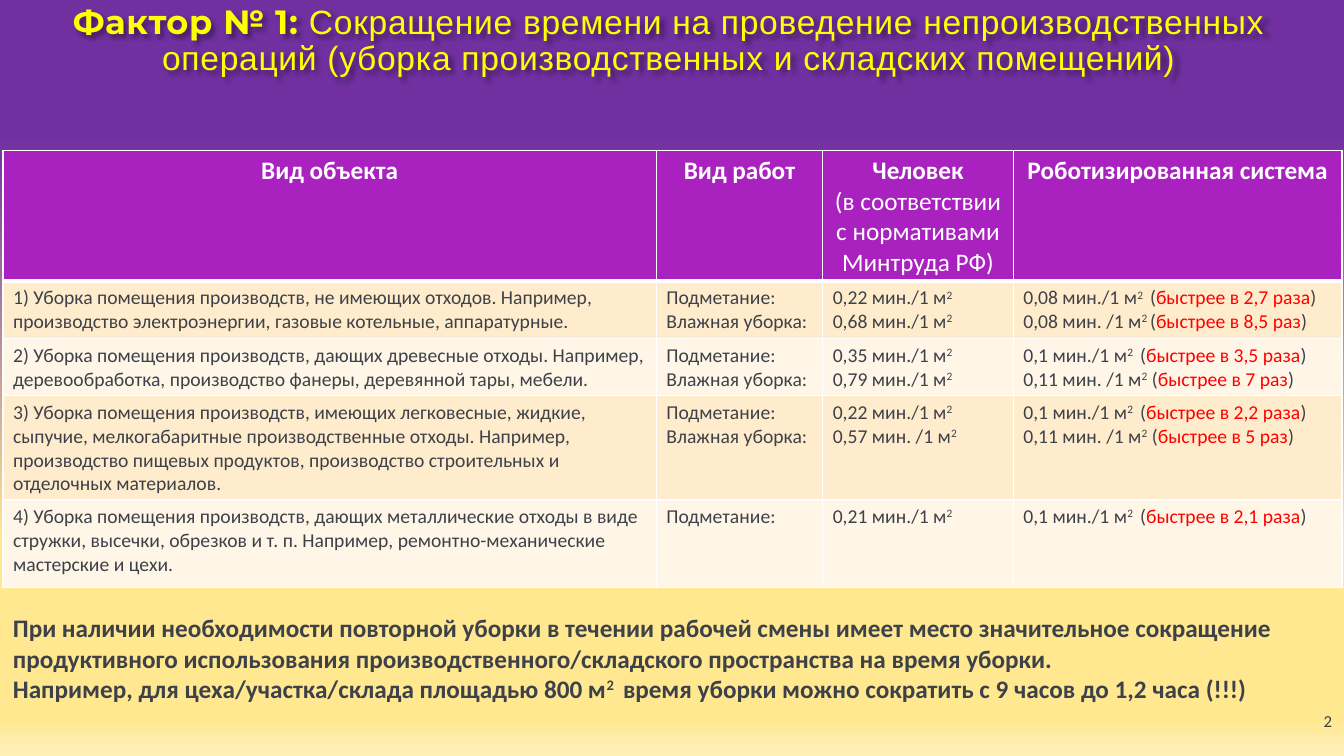
import pptx
import pptx.dml.color
import pptx.enum.text
import pptx.oxml
import pptx.oxml.ns
import pptx.util

COLORS = {
    "purple": "7030A0", "gold": "FFE88F", "cream": "FFEFB4", "header": "A922C0",
    "odd": "FFECCC", "even": "FFF6E7", "text": "3D4149", "title": "FFFF00",
    "white": "FFFFFF", "red": "FF0000",
}
WIDTH, HEIGHT = 13.33, 7.5
COLUMNS = [6.48, 1.65, 1.89, 3.26]
ROWS = [0.97, 0.42, 0.42, 0.77, 0.87]
ALIGN = pptx.enum.text.PP_ALIGN
ANCHOR = pptx.enum.text.MSO_ANCHOR
NS = pptx.oxml.ns.nsdecls("a")

TITLE = [
    "Фактор № 1: ",
    "Сокращение времени на проведение непроизводственных операций "
    "(уборка производственных и складских помещений)",
]
HEADERS = [
    ["Вид объекта"],
    ["Вид работ"],
    ["Человек", "(в соответствии с нормативами Минтруда РФ)"],
    ["Роботизированная система"],
]
SWEEP, MOP = "Подметание:", "Влажная уборка:"
# In marked text "|" parts runs, "^" opens a superscript run and "!" a red one.
BODY = [
    [["1) Уборка помещения производств, не имеющих отходов. Например, "
      "производство электроэнергии, газовые котельные, аппаратурные."],
     [SWEEP, MOP],
     ["0,22 мин./1 м|^2", "0,68 мин./1 м|^2"],
     ["0,08 мин./1 м|^2 | (|!быстрее в 2,7 раза|)",
      "0,08 мин. /1 м|^2 |(|!быстрее в 8,5 раз|)"]],
    [["2) Уборка помещения производств, дающих древесные отходы. Например, "
      "деревообработка, производство фанеры, деревянной тары, мебели."],
     [SWEEP, MOP],
     ["0,35 мин./1 м|^2", "0,79 мин./1 м|^2"],
     ["0,1 мин./1 м|^2 | (|!быстрее в 3,5 раза|)",
      "0,11 мин. /1 м|^2| (|!быстрее в 7 раз|)"]],
    [["3) Уборка помещения производств, имеющих легковесные, жидкие,",
      "сыпучие, мелкогабаритные производственные отходы. Например,",
      "производство пищевых продуктов, производство строительных и "
      "отделочных материалов."],
     [SWEEP, MOP],
     ["0,22 мин./1 м|^2", "0,57 мин. /1 м|^2"],
     ["0,1 мин./1 м|^2 | (|!быстрее в 2,2 раза|)",
      "0,11 мин. /1 м|^2| (|!быстрее в 5 раз|)"]],
    [["4) Уборка помещения производств, дающих металлические отходы в виде "
      "стружки, высечки, обрезков и т. п. Например, ремонтно-механические "
      "мастерские и цехи."],
     [SWEEP],
     ["0,21 мин./1 м|^2"],
     ["0,1 мин./1 м|^2 | (|!быстрее в 2,1 раза|)"]],
]
NOTE = [
    "При наличии необходимости повторной уборки в течении рабочей смены имеет "
    "место значительное сокращение продуктивного использования "
    "производственного/складского пространства на время уборки.",
    "Например, для цеха/участка/склада площадью 800 м|^2 | время уборки можно "
    "сократить с 9 часов до 1,2 часа (!!!)",
]


def rgb(name):
    return pptx.dml.color.RGBColor.from_string(COLORS[name])


def add_run(p, text, size, color, bold=False, font="Calibri"):
    r = p.add_run()
    r.text = text
    r.font.size = pptx.util.Pt(size)
    r.font.name = font
    r.font.bold = bold
    r.font.color.rgb = rgb(color)
    return r


def fill_text(tf, lines, size, color, bold=False, align=ALIGN.LEFT):
    """Write each marked line as one paragraph."""
    for i, line in enumerate(lines):
        p = tf.add_paragraph() if i else tf.paragraphs[0]
        p.alignment = align
        for part in line.split("|"):
            red = part.startswith("!")
            r = add_run(p, part.lstrip("^!"), size, "red" if red else color, bold)
            if part.startswith("^"):
                r._r.get_or_add_rPr().set("baseline", "30000")


def add_box(s, box):
    sp = s.shapes.add_textbox(*map(pptx.util.Inches, box))
    sp.text_frame.word_wrap = True
    return sp


def paint_background(s):
    fill = s.background.fill
    fill.gradient()
    grad = next(s.element.iter(pptx.oxml.ns.qn("a:gradFill")))
    for child in list(grad):
        grad.remove(child)
    stops = [(18, "purple"), (71, "gold"), (95, "gold"), (99, "cream")]
    marks = "".join(
        f'<a:gs pos="{pos * 1000}"><a:srgbClr val="{COLORS[name]}"/></a:gs>'
        for pos, name in stops)
    grad.append(pptx.oxml.parse_xml(f"<a:gsLst {NS}>{marks}</a:gsLst>"))
    grad.append(pptx.oxml.parse_xml(f'<a:lin {NS} ang="5400000" scaled="0"/>'))


def add_title(s, box):
    sp = add_box(s, box)
    sp._element.spPr.append(pptx.oxml.parse_xml(
        f'<a:effectLst {NS}><a:outerShdw blurRad="50800" dist="38100" dir="2700000">'
        '<a:srgbClr val="000000"><a:alpha val="40000"/></a:srgbClr>'
        '</a:outerShdw></a:effectLst>'))
    p = sp.text_frame.paragraphs[0]
    p.alignment = ALIGN.CENTER
    p.line_spacing = 0.9
    for text, font, bold in zip(TITLE, ("Montserrat", "Arial"), (True, False)):
        r = add_run(p, text, 24, "title", bold, font)
        r._r.get_or_add_rPr().set("spc", "50")


def set_borders(cell, row):
    tcPr = cell._tc.get_or_add_tcPr()
    for side in "LRTB":
        heavy = (row, side) in ((0, "B"), (1, "T"))
        width = pptx.util.Pt(3 if heavy else 1)
        tcPr.append(pptx.oxml.parse_xml(
            f'<a:ln{side} {NS} w="{width}"><a:solidFill>'
            f'<a:srgbClr val="{COLORS["white"]}"/></a:solidFill></a:ln{side}>'))


def add_norms_table(s, box):
    table = s.shapes.add_table(
        len(ROWS), len(COLUMNS), *map(pptx.util.Inches, box)).table
    for column, width in zip(table.columns, COLUMNS):
        column.width = pptx.util.Inches(width)
    for row, height in zip(table.rows, ROWS):
        row.height = pptx.util.Inches(height)
    for i, values in enumerate([HEADERS] + BODY):
        for j, lines in enumerate(values):
            cell = table.cell(i, j)
            set_borders(cell, i)
            cell.fill.solid()
            if i:
                cell.fill.fore_color.rgb = rgb("odd" if i % 2 else "even")
                fill_text(cell.text_frame, lines, 14, "text")
            else:
                cell.fill.fore_color.rgb = rgb("header")
                fill_text(cell.text_frame, lines, 18, "white", True, ALIGN.CENTER)
                for p in cell.text_frame.paragraphs[1:]:
                    p.runs[0].font.bold = False


def add_note(s, box):
    tf = add_box(s, box).text_frame
    tf.auto_size = pptx.enum.text.MSO_AUTO_SIZE.SHAPE_TO_FIT_TEXT
    fill_text(tf, NOTE, 18, "text", True)


def add_page_number(s, box):
    tf = add_box(s, box).text_frame
    tf.vertical_anchor = ANCHOR.MIDDLE
    fill_text(tf, ["2"], 12, "text", align=ALIGN.RIGHT)


def main():
    prs = pptx.Presentation()
    prs.slide_width = pptx.util.Inches(WIDTH)
    prs.slide_height = pptx.util.Inches(HEIGHT)
    s = prs.slides.add_slide(prs.slide_layouts[6])
    paint_background(s)
    add_page_number(s, (10.31, 6.95, 3, 0.4))
    add_title(s, (-0.01, 0, 13.29, 1.49))
    add_norms_table(s, (0.03, 1.49, sum(COLUMNS), sum(ROWS)))
    add_note(s, (0.03, 6.03, 13.01, 1.27))
    prs.save("out.pptx")


if __name__ == "__main__":
    main()
